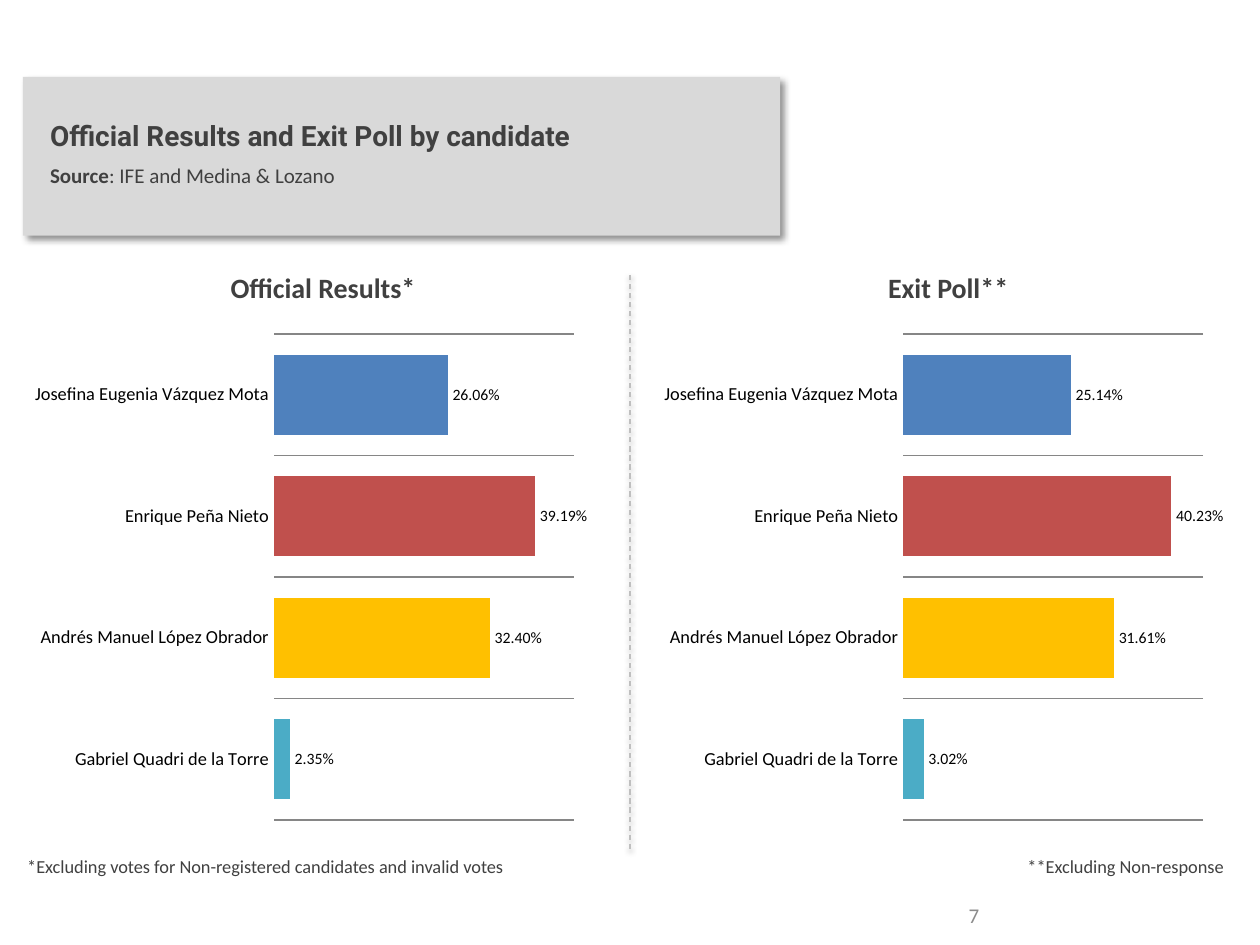
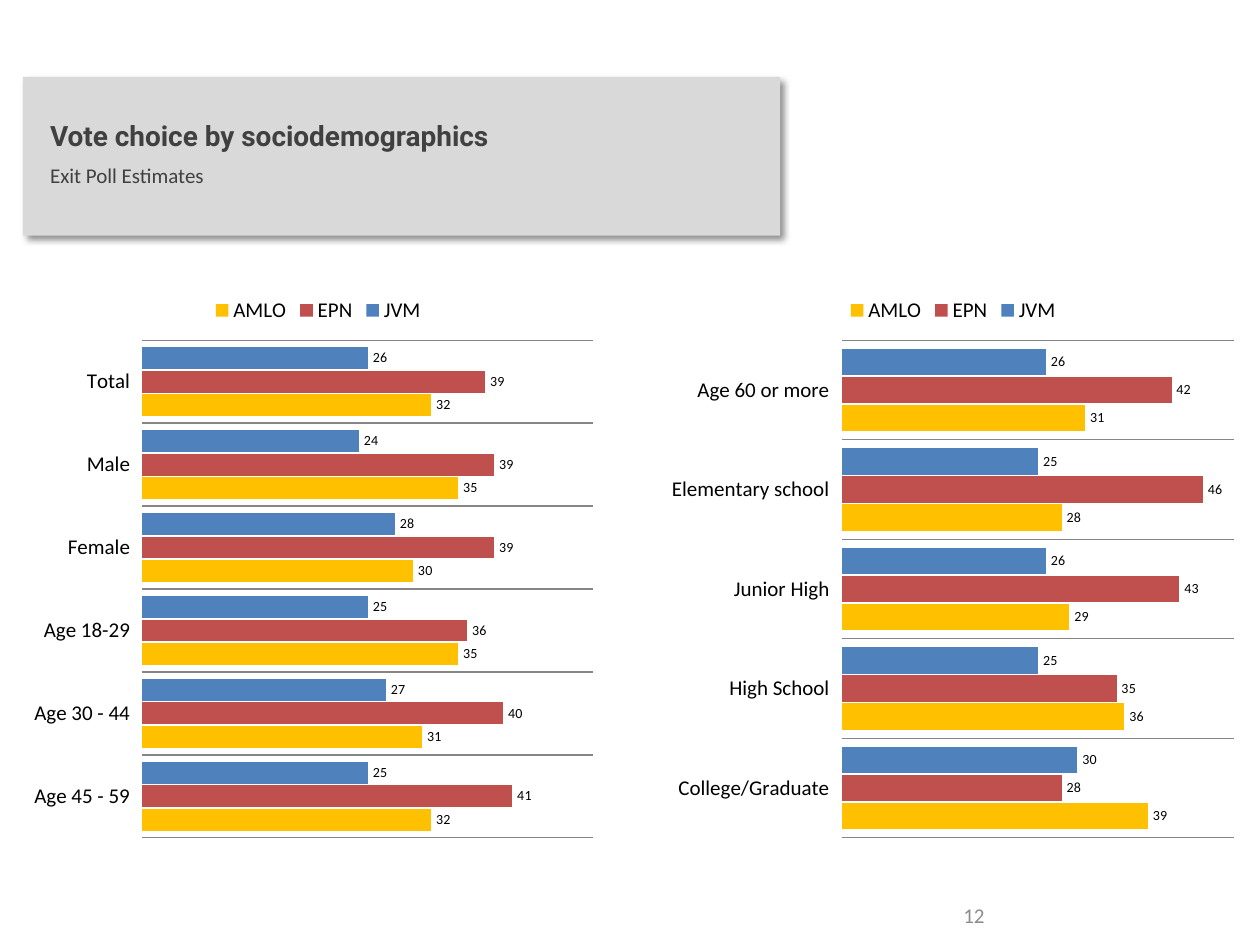
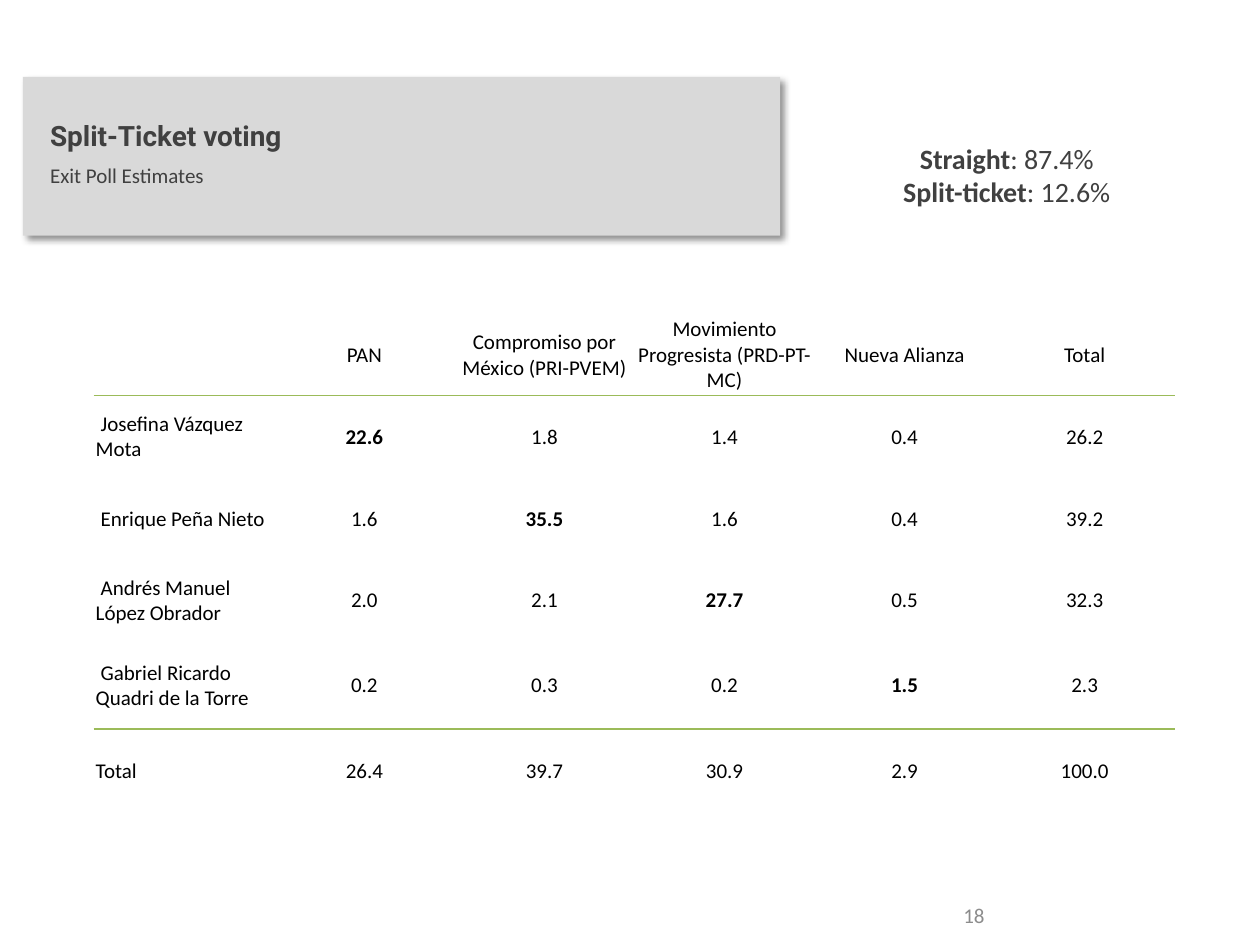
import lxml.etree
import pptx
import pptx.chart.data
import pptx.dml.color
import pptx.enum.chart
import pptx.enum.dml
import pptx.enum.shapes
import pptx.enum.text
import pptx.oxml
import pptx.oxml.ns
import pptx.util
from pptx.util import Cm

RGBColor = pptx.dml.color.RGBColor
BAND_GRAY = RGBColor(0xD9, 0xD9, 0xD9)
TEXT_GRAY = RGBColor(0x40, 0x40, 0x40)
NUMBER_GRAY = RGBColor(0x8C, 0x8C, 0x8C)
DIVIDER_GRAY = RGBColor(0xBF, 0xBF, 0xBF)
GRID_GRAY = RGBColor(0x86, 0x86, 0x86)
BLACK = RGBColor(0x00, 0x00, 0x00)
BLUE = RGBColor(0x4F, 0x81, 0xBD)
RED = RGBColor(0xC0, 0x50, 0x4D)
YELLOW = RGBColor(0xFF, 0xC0, 0x00)
TEAL = RGBColor(0x4B, 0xAC, 0xC6)
GREEN = RGBColor(0x9B, 0xBB, 0x59)

LEFT = pptx.enum.text.PP_ALIGN.LEFT
CENTER = pptx.enum.text.PP_ALIGN.CENTER
RIGHT = pptx.enum.text.PP_ALIGN.RIGHT
TOP = pptx.enum.text.MSO_ANCHOR.TOP
MIDDLE = pptx.enum.text.MSO_ANCHOR.MIDDLE
OUTSIDE_END = pptx.enum.chart.XL_LABEL_POSITION.OUTSIDE_END
DRAWING = pptx.oxml.ns.nsdecls("a")


def write(frame, text, new_paragraph=False, size=12, bold=False, font="Calibri",
          color=TEXT_GRAY, align=LEFT, space_after=0):
    paragraph = frame.add_paragraph() if new_paragraph else frame.paragraphs[-1]
    paragraph.alignment = align
    paragraph.space_after = pptx.util.Pt(space_after)
    run = paragraph.add_run()
    run.text = text
    run.font.name = font
    run.font.size = pptx.util.Pt(size)
    run.font.bold = bold
    run.font.color.rgb = color
    return paragraph


def add_box(slide, left, top, width, height, anchor=TOP):
    frame = slide.shapes.add_textbox(Cm(left), Cm(top), Cm(width), Cm(height)).text_frame
    frame.word_wrap = True
    frame.vertical_anchor = anchor
    return frame


SHADOW = (
    f'<a:effectLst {DRAWING}><a:outerShdw blurRad="{{blur}}" dist="{{distance}}" dir="{{angle}}" '
    'algn="tl" rotWithShape="0"><a:srgbClr val="000000"><a:alpha val="{alpha}"/></a:srgbClr>'
    '</a:outerShdw></a:effectLst>'
)

presentation = pptx.Presentation()
presentation.slide_width = Cm(25.4)
presentation.slide_height = Cm(19.05)

HEADERS = [
    ("7", "Official Results and Exit Poll by candidate",
     [("Source", True), (": IFE and Medina & Lozano", False)]),
    ("12", "Vote choice by sociodemographics", [("Exit Poll Estimates", False)]),
    ("18", "Split-Ticket voting", [("Exit Poll Estimates", False)]),
]
slides = []
for number, title, subtitle in HEADERS:
    slide = presentation.slides.add_slide(presentation.slide_layouts[6])
    slides.append(slide)
    band = slide.shapes.add_shape(
        pptx.enum.shapes.MSO_SHAPE.RECTANGLE, Cm(0.46), Cm(1.55), Cm(15.27), Cm(3.2))
    band.fill.solid()
    band.fill.fore_color.rgb = BAND_GRAY
    band.line.fill.background()
    band._element.spPr.append(pptx.oxml.parse_xml(SHADOW.format(
        blur=pptx.util.Pt(4), distance=pptx.util.Pt(3), angle=45 * 60000, alpha=43000)))
    write(add_box(slide, 18.67, 17.93, 1.93, 1.02, MIDDLE), number,
          color=NUMBER_GRAY, align=CENTER)
    title_frame = add_box(slide, 0.76, 2.24, 14.55, 1.68, MIDDLE)
    write(title_frame, title, size=16, bold=True, font="Roboto", space_after=6)
    for index, (text, bold) in enumerate(subtitle):
        write(title_frame, text, new_paragraph=index == 0, bold=bold, space_after=6)

candidate_slide, demographics_slide, ticket_slide = slides

divider = candidate_slide.shapes.add_connector(
    pptx.enum.shapes.MSO_CONNECTOR.STRAIGHT, Cm(12.7), Cm(5.54), Cm(12.7), Cm(17.12))
divider.line.color.rgb = DIVIDER_GRAY
divider.line.width = pptx.util.Pt(0.75)
divider.line.dash_style = pptx.enum.dml.MSO_LINE.DASH
divider._element.spPr.append(pptx.oxml.parse_xml(SHADOW.format(
    blur=pptx.util.Pt(3.1), distance=pptx.util.Pt(1.6), angle=90 * 60000, alpha=38000)))

for left, heading in [(0.71, "Official Results*"), (13.31, "Exit Poll**")]:
    write(add_box(candidate_slide, left, 5.33, 11.61, 0.94), heading,
          size=16, bold=True, align=CENTER)
for left, note, align in [
    (0.3, "*Excluding votes for Non-registered candidates and invalid votes", LEFT),
    (13.11, "**Excluding Non-response", RIGHT),
]:
    write(add_box(candidate_slide, left, 17.12, 11.81, 0.71), note, size=10.5, align=align)

CANDIDATES = ["Josefina Eugenia Vázquez Mota", "Enrique Peña Nieto",
              "Andrés Manuel López Obrador", "Gabriel Quadri de la Torre"]
CANDIDATE_STYLE = dict(
    slide=candidate_slide, top=6.53, width=11.4, height=10.21, plot_top=0.02, plot_height=0.96,
    format="0.00%", maximum=0.45, gap=52, overlap=0, axis_size=10.5, label_size=9,
    tick=pptx.enum.chart.XL_TICK_MARK.NONE, legend=False,
    point_colors=[BLUE, RED, YELLOW, TEAL], categories=CANDIDATES, labels={})
DEMOGRAPHIC_STYLE = dict(
    slide=demographics_slide, top=5.72, width=11.81, height=11.4, plot_top=0.1, plot_height=0.88,
    format="0", maximum=50, gap=66, overlap=-7, axis_size=12, label_size=8,
    tick=pptx.enum.chart.XL_TICK_MARK.OUTSIDE, legend=True, point_colors=[], labels={})
CHARTS = [
    dict(CANDIDATE_STYLE, left=0.51, plot_left=0.44, plot_width=0.53,
         series={"Series 1": [0.2606, 0.3919, 0.324, 0.0235]}),
    dict(CANDIDATE_STYLE, left=13.31, plot_left=0.43, plot_width=0.53,
         series={"Series 1": [0.2514, 0.4023, 0.3161, 0.0302]}),
    dict(DEMOGRAPHIC_STYLE, left=0.51, plot_left=0.2, plot_width=0.77,
         categories=["Total", "Male", "Female", "Age 18-29", "Age 30 - 44", "Age 45 - 59"],
         series={"JVM": [25, 24, 28, 25, 27, 25], "EPN": [38, 39, 39, 36, 40, 41],
                 "AMLO": [32, 35, 30, 35, 31, 32]},
         labels={"JVM": "26", "EPN": "39"}),
    dict(DEMOGRAPHIC_STYLE, left=13.31, plot_left=0.31, plot_width=0.67,
         categories=["Age 60 or more", "Elementary school", "Junior High", "High School",
                     "College/Graduate"],
         series={"JVM": [26, 25, 26, 25, 30], "EPN": [42, 46, 43, 35, 28],
                 "AMLO": [31, 28, 29, 36, 39]}),
]

for style in CHARTS:
    chart_data = pptx.chart.data.CategoryChartData(number_format=style["format"])
    chart_data.categories = style["categories"]
    for name, values in style["series"].items():
        chart_data.add_series(name, values)
    chart = style["slide"].shapes.add_chart(
        pptx.enum.chart.XL_CHART_TYPE.BAR_CLUSTERED, Cm(style["left"]), Cm(style["top"]),
        Cm(style["width"]), Cm(style["height"]), chart_data).chart
    chart.has_title = False
    chart.font.name = "Calibri"
    chart.font.size = pptx.util.Pt(18)
    chart.font.color.rgb = BLACK
    chart.has_legend = style["legend"]
    if style["legend"]:
        chart.legend.position = pptx.enum.chart.XL_LEGEND_POSITION.TOP
        chart.legend.include_in_layout = False
        chart.legend.font.size = pptx.util.Pt(12)

    category_axis = chart.category_axis
    category_axis.reverse_order = True
    category_axis.major_tick_mark = style["tick"]
    category_axis.tick_labels.font.size = pptx.util.Pt(style["axis_size"])
    category_axis.format.line.fill.background()
    category_axis.has_major_gridlines = True
    category_axis.major_gridlines.format.line.color.rgb = GRID_GRAY
    category_axis.major_gridlines.format.line.width = pptx.util.Pt(0.75)
    chart.value_axis.has_major_gridlines = False
    chart.value_axis.visible = False
    chart.value_axis.minimum_scale = 0
    chart.value_axis.maximum_scale = style["maximum"]

    plot = chart.plots[0]
    plot.gap_width = style["gap"]
    plot.overlap = style["overlap"]
    plot.vary_by_categories = False
    for series, color in zip(plot.series, [BLUE, RED, YELLOW]):
        series.format.fill.solid()
        series.format.fill.fore_color.rgb = color
        for index, point_color in enumerate(style["point_colors"]):
            point_fill = series.points[index].format.fill
            point_fill.solid()
            point_fill.fore_color.rgb = point_color
        labels = series.data_labels
        labels.show_value = True
        labels.number_format = style["format"]
        labels.number_format_is_linked = False
        labels.position = OUTSIDE_END
        labels.font.size = pptx.util.Pt(style["label_size"])
        if series.name in style["labels"]:
            total_label = series.points[0].data_label
            write(total_label.text_frame, style["labels"][series.name],
                  size=style["label_size"], color=BLACK, align=CENTER)
            total_label.position = OUTSIDE_END

    plot_area = chart._chartSpace.chart.plotArea
    for layout in plot_area.findall(pptx.oxml.ns.qn("c:layout")):
        plot_area.remove(layout)
    plot_area.insert(0, pptx.oxml.parse_xml(
        f'<c:layout {pptx.oxml.ns.nsdecls("c")}><c:manualLayout><c:layoutTarget val="inner"/>'
        '<c:xMode val="edge"/><c:yMode val="edge"/>'
        f'<c:x val="{style["plot_left"]}"/><c:y val="{style["plot_top"]}"/>'
        f'<c:w val="{style["plot_width"]}"/><c:h val="{style["plot_height"]}"/>'
        '</c:manualLayout></c:layout>'))

TICKET_ROWS = [
    ["", "PAN", "Compromiso por México (PRI-PVEM)", "Movimiento Progresista (PRD-PT-MC)",
     "Nueva Alianza", "Total"],
    ["Josefina Vázquez Mota", "22.6", "1.8", "1.4", "0.4", "26.2"],
    ["Enrique Peña Nieto", "1.6", "35.5", "1.6", "0.4", "39.2"],
    ["Andrés Manuel López Obrador", "2.0", "2.1", "27.7", "0.5", "32.3"],
    ["Gabriel Ricardo Quadri de la Torre", "0.2", "0.3", "0.2", "1.5", "2.3"],
    ["Total", "26.4", "39.7", "30.9", "2.9", "100.0"],
]
RULES = {0: "lnB", 1: "lnT", 4: "lnB", 5: "lnT"}
ticket_table = ticket_slide.shapes.add_table(
    6, 6, Cm(1.9), Cm(6.32), Cm(21.78), Cm(10.03)).table
ticket_table.first_row = False
ticket_table.horz_banding = False
for column in ticket_table.columns:
    column.width = Cm(3.63)
for row_index, values in enumerate(TICKET_ROWS):
    ticket_table.rows[row_index].height = Cm(1.78 if row_index == 4 else 1.65)
    for column_index, text in enumerate(values):
        cell = ticket_table.cell(row_index, column_index)
        cell.fill.background()
        cell.vertical_anchor = MIDDLE
        cell.margin_left = cell.margin_right = cell.margin_top = Cm(0.03)
        cell.margin_bottom = 0
        if text:
            paragraph = write(
                cell.text_frame, text, color=BLACK, align=CENTER if column_index else LEFT,
                bold=row_index == column_index and row_index in range(1, 5))
            if column_index == 0 and row_index < 5:
                paragraph._p.get_or_add_pPr().set("indent", str(Cm(0.1)))
        if row_index in RULES:
            side = RULES[row_index]
            cell._tc.get_or_add_tcPr().insert(0, pptx.oxml.parse_xml(
                f'<a:{side} {DRAWING} w="{pptx.util.Pt(1)}"><a:solidFill>'
                f'<a:srgbClr val="{GREEN}"/></a:solidFill></a:{side}>'))

share_frame = add_box(ticket_slide, 17.3, 2.72, 5.99, 1.63)
for index, (name, share) in enumerate([("Straight", ": 87.4%"), ("Split-ticket", ": 12.6%")]):
    write(share_frame, name, new_paragraph=index > 0, size=16, bold=True, align=CENTER)
    write(share_frame, share, size=16, align=CENTER)

presentation.save("out.pptx")
